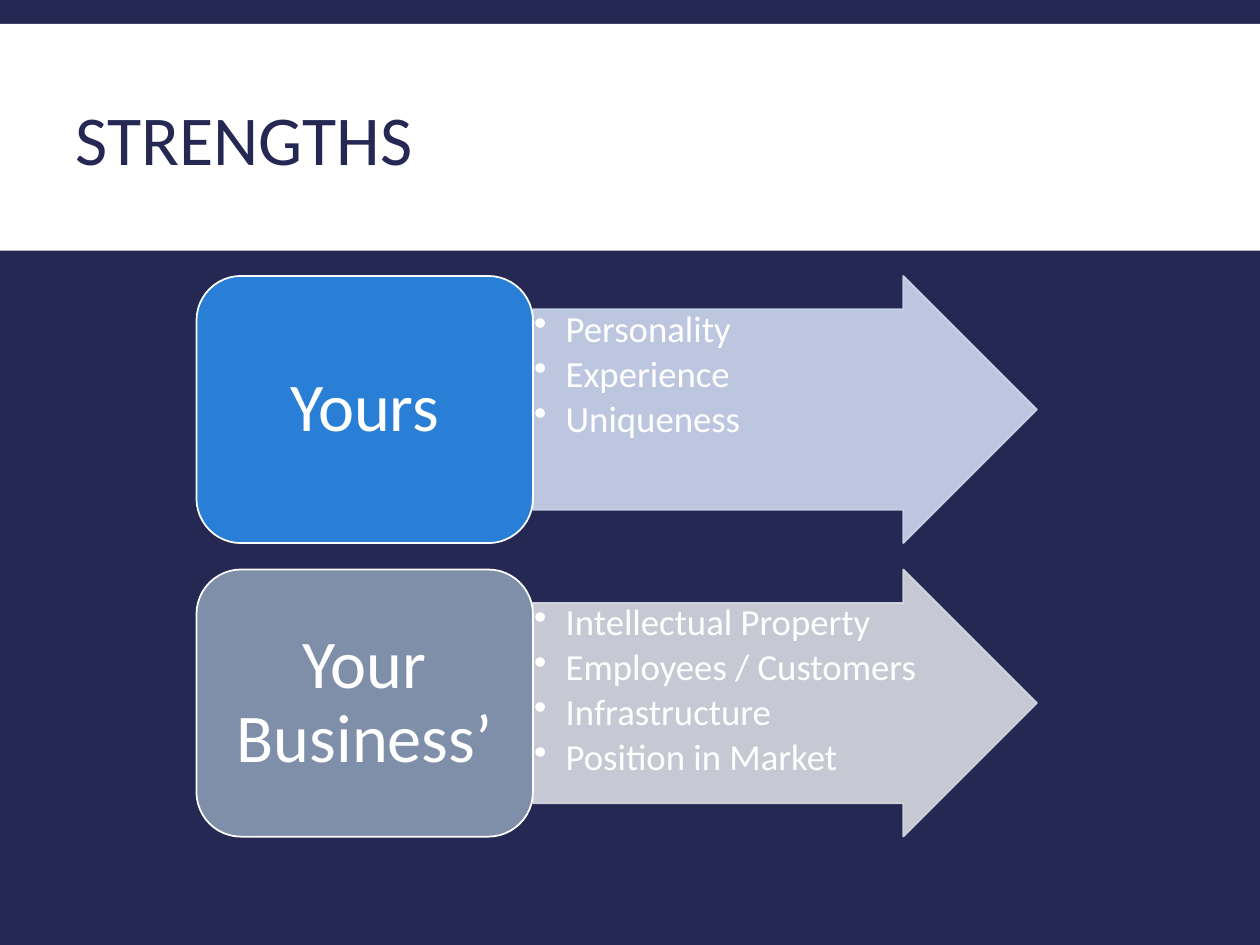
from dataclasses import dataclass

from lxml.etree import SubElement
from pptx import Presentation
from pptx.dml.color import RGBColor as Rgb
from pptx.enum.shapes import MSO_SHAPE as Kind
from pptx.enum.text import MSO_ANCHOR as Anchor, PP_ALIGN as Align
from pptx.oxml.ns import qn
from pptx.util import Inches, Pt


@dataclass(frozen=True)
class Theme:
    """Colours, font and type sizes of the slide."""
    navy: str = "242852"
    white: str = "FFFFFF"
    font: str = "Calibri"
    title: int = 40
    label: int = 39
    item: int = 21


THEME = Theme()
WIDE, HIGH = 10, 7.5
LEFT, TOP = 1.56, 2.19
LABEL, ARROW, TALL, PITCH = 2.67, 4, 2.12, 2.33
ROWS = [
    ("Yours", "297FD5", "CDD8EF",
     ["Personality", "Experience", "Uniqueness"]),
    ("Your Business’", "7F8FA9", "D8DBE2",
     ["Intellectual Property", "Employees / Customers",
      "Infrastructure", "Position in Market"]),
]


def paint(fill, color, alpha=None):
    """Make a fill solid, with an optional opacity in percent."""
    fill.solid()
    fill.fore_color.rgb = Rgb.from_string(color)
    if alpha:
        tone = fill._xPr.find(qn("a:solidFill"))[0]
        SubElement(tone, qn("a:alpha"), val=str(alpha * 1000))


def style(para, size, color, gap, align=Align.LEFT):
    """Set the font, spacing and alignment of a paragraph."""
    para.font.name, para.font.size = THEME.font, Pt(size)
    para.font.color.rgb = Rgb.from_string(color)
    para.line_spacing, para.space_after = gap, Pt(0)
    para.alignment = align


def bullet(para):
    """Give a paragraph a hanging bullet."""
    props = para._p.get_or_add_pPr()
    props.set("marL", str(Inches(0.25)))
    props.set("indent", str(-Inches(0.25)))
    SubElement(props, qn("a:buChar"), char="•")


def pad(frame, side, edge):
    """Set the side and top margins of a text frame."""
    frame.margin_left = frame.margin_right = Inches(side)
    frame.margin_top = frame.margin_bottom = Inches(edge)
    frame.word_wrap = True


def block(slide, kind, box, fill, line=None, alpha=None):
    """Add a filled shape, outlined when a line colour is given."""
    shape = slide.shapes.add_shape(kind, *map(Inches, box))
    shape.shadow.inherit = False
    paint(shape.fill, fill, alpha)
    if line:
        shape.line.width = Pt(1)
        paint(shape.line.fill, line, alpha)
    else:
        shape.line.fill.background()
    return shape


def heading(slide, text):
    """Place the title on its white band."""
    band = block(slide, Kind.RECTANGLE, (0, 0.19, WIDE, 1.8), THEME.white)
    title = slide.shapes.title
    title._element.addprevious(band._element)
    title.left, title.top = Inches(0.5), Inches(0.52)
    title.width, title.height = Inches(9), Inches(1.25)
    frame = title.text_frame
    frame.text, frame.vertical_anchor = text, Anchor.MIDDLE
    style(frame.paragraphs[0], THEME.title, THEME.navy, 0.85)


def arrow(slide, top, tint, items):
    """Add an arrow that holds a bulleted list."""
    box = LEFT + LABEL, top, ARROW, TALL
    shape = block(slide, Kind.RIGHT_ARROW, box, tint, tint, 90)
    shape.adjustments[0] = 0.75
    frame = shape.text_frame
    frame.text, frame.vertical_anchor = "\n".join(items), Anchor.TOP
    pad(frame, 0.01, 0.01)
    for para in frame.paragraphs:
        style(para, THEME.item, THEME.white, 0.9)
        para.space_after = Pt(3)
        bullet(para)


def label(slide, top, text, fill):
    """Add a rounded box that names a row."""
    box = LEFT, top, LABEL, TALL
    shape = block(slide, Kind.ROUNDED_RECTANGLE, box, fill, THEME.white)
    frame = shape.text_frame
    frame.text, frame.vertical_anchor = text, Anchor.MIDDLE
    pad(frame, 0.16, 0.08)
    style(frame.paragraphs[0], THEME.label, THEME.white, 0.9, Align.CENTER)


def main():
    """Build the slide and save it."""
    deck = Presentation()
    deck.slide_width, deck.slide_height = Inches(WIDE), Inches(HIGH)
    slide = deck.slides.add_slide(deck.slide_layouts[5])
    paint(slide.background.fill, THEME.navy)
    heading(slide, "STRENGTHS")
    for row, (name, fill, tint, items) in enumerate(ROWS):
        top = TOP + row * PITCH
        arrow(slide, top, tint, items)
        label(slide, top, name, fill)
    deck.save("out.pptx")


if __name__ == "__main__":
    main()
